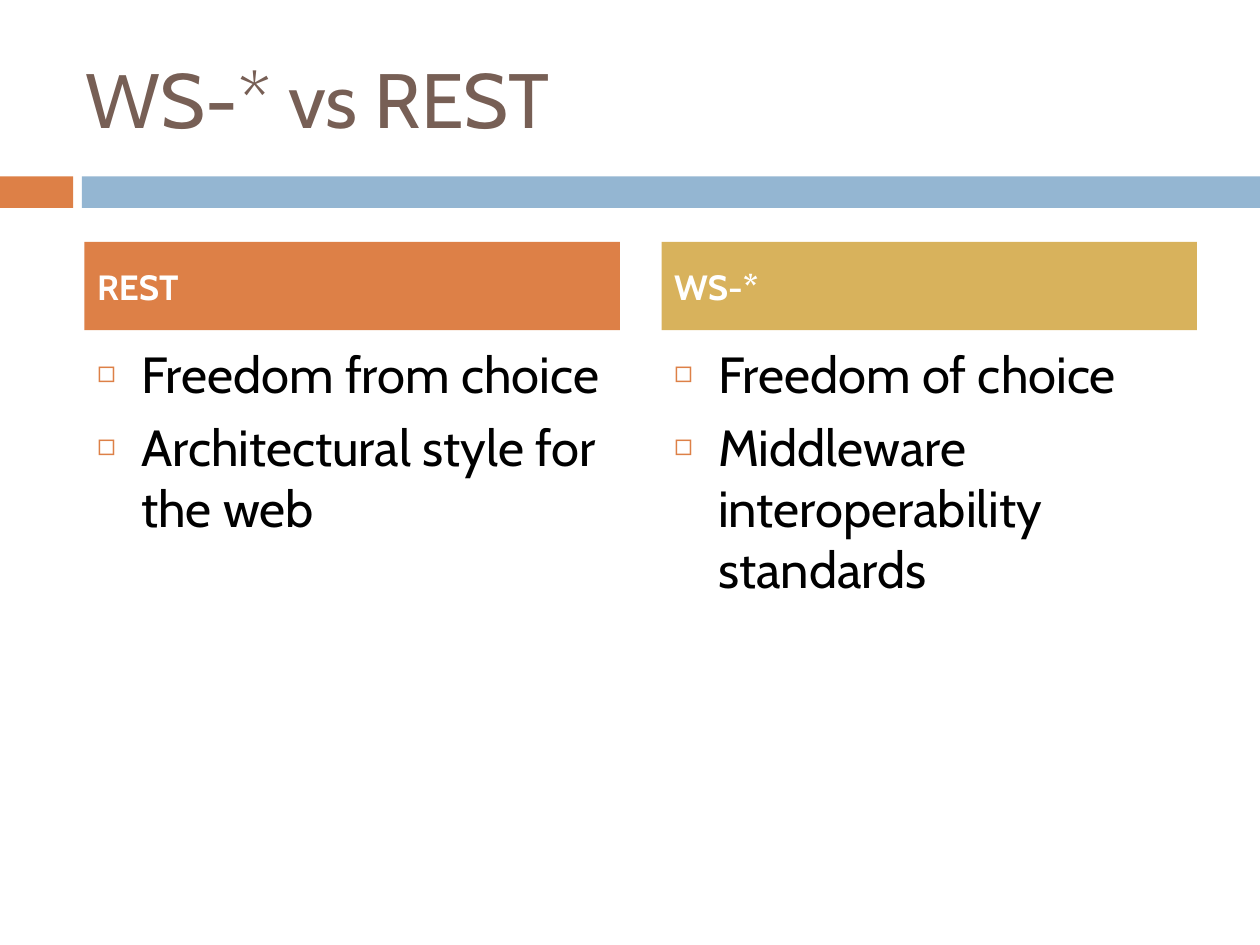
from lxml.etree import SubElement
from pptx import Presentation
from pptx.dml.color import RGBColor
from pptx.enum.shapes import MSO_SHAPE
from pptx.enum.text import MSO_ANCHOR, MSO_AUTO_SIZE, PP_ALIGN
from pptx.oxml.ns import qn
from pptx.util import Inches, Pt

TITLE = "WS-* vs REST"
COLUMNS = [
    ("REST", "orange", 2.67, 1.83,
     ["Freedom from choice", "Architectural style for the web"]),
    ("WS-*", "gold", 2.67, 2.17,
     ["Freedom of choice", "Middleware interoperability standards"]),
]
BANDS = [(0, 0.58, "orange"), (0.65, 9.35, "blue")]
COLORS = {
    "orange": "DD8047",
    "blue": "94B6D2",
    "gold": "D8B25C",
    "brown": "775F55",
    "black": "000000",
    "white": "FFFFFF",
}
FONT = "Cabin"
LEFT, WIDTH, GAP = 0.67, 4.25, 0.33


def color(name):
    return RGBColor.from_string(COLORS[name])


def paint(shape, name):
    shape.fill.solid()
    shape.fill.fore_color.rgb = color(name)
    shape.line.fill.background()


def place(shape, left, top, width, height):
    shape.left, shape.top = Inches(left), Inches(top)
    shape.width, shape.height = Inches(width), Inches(height)


def bullet(para):
    props = para._p.get_or_add_pPr()
    props.set("marL", str(Inches(0.35)))
    props.set("indent", str(-Inches(0.35)))
    tint = SubElement(props, qn("a:buClr"))
    SubElement(tint, qn("a:srgbClr"), val=COLORS["orange"])
    SubElement(props, qn("a:buSzPct"), val="60000")
    SubElement(props, qn("a:buFont"), typeface="Arial")
    SubElement(props, qn("a:buChar"), char="◻")


def write(shape, lines, size, tone, anchor, before=0, bold=False, marks=False):
    frame = shape.text_frame
    frame.text = "\n".join(lines)
    frame.word_wrap = True
    frame.auto_size = MSO_AUTO_SIZE.NONE
    frame.vertical_anchor = anchor
    for para in frame.paragraphs:
        if marks:
            bullet(para)
        para.alignment = PP_ALIGN.LEFT
        para.space_before = Pt(before)
        font = para.font
        font.name, font.size, font.bold = FONT, Pt(size), bold
        font.color.rgb = color(tone)


def main():
    deck = Presentation()
    deck.slide_width, deck.slide_height = Inches(10), Inches(7.5)
    slide = deck.slides.add_slide(deck.slide_layouts.get_by_name("Comparison"))

    for left, width, tone in BANDS:
        band = slide.shapes.add_shape(
            MSO_SHAPE.RECTANGLE, Inches(left), Inches(1.4), Inches(width), Inches(0.25))
        band.shadow.inherit = False
        paint(band, tone)

    title = slide.shapes.title
    place(title, 0.58, 0.3, 8.92, 0.95)
    write(title, [TITLE], 44, "brown", MSO_ANCHOR.MIDDLE)

    holders = list(slide.placeholders)[1:]
    pairs = zip(holders[::2], holders[1::2])
    for i, ((head, body), column) in enumerate(zip(pairs, COLUMNS)):
        name, tone, top, height, points = column
        left = LEFT + i * (WIDTH + GAP)
        place(head, left, 1.92, WIDTH, 0.7)
        paint(head, tone)
        write(head, [name], 20, "white", MSO_ANCHOR.MIDDLE, 7, bold=True)
        place(body, left, top, WIDTH, height)
        write(body, points, 29, "black", MSO_ANCHOR.TOP, 7, marks=True)

    deck.save("out.pptx")


if __name__ == "__main__":
    main()
